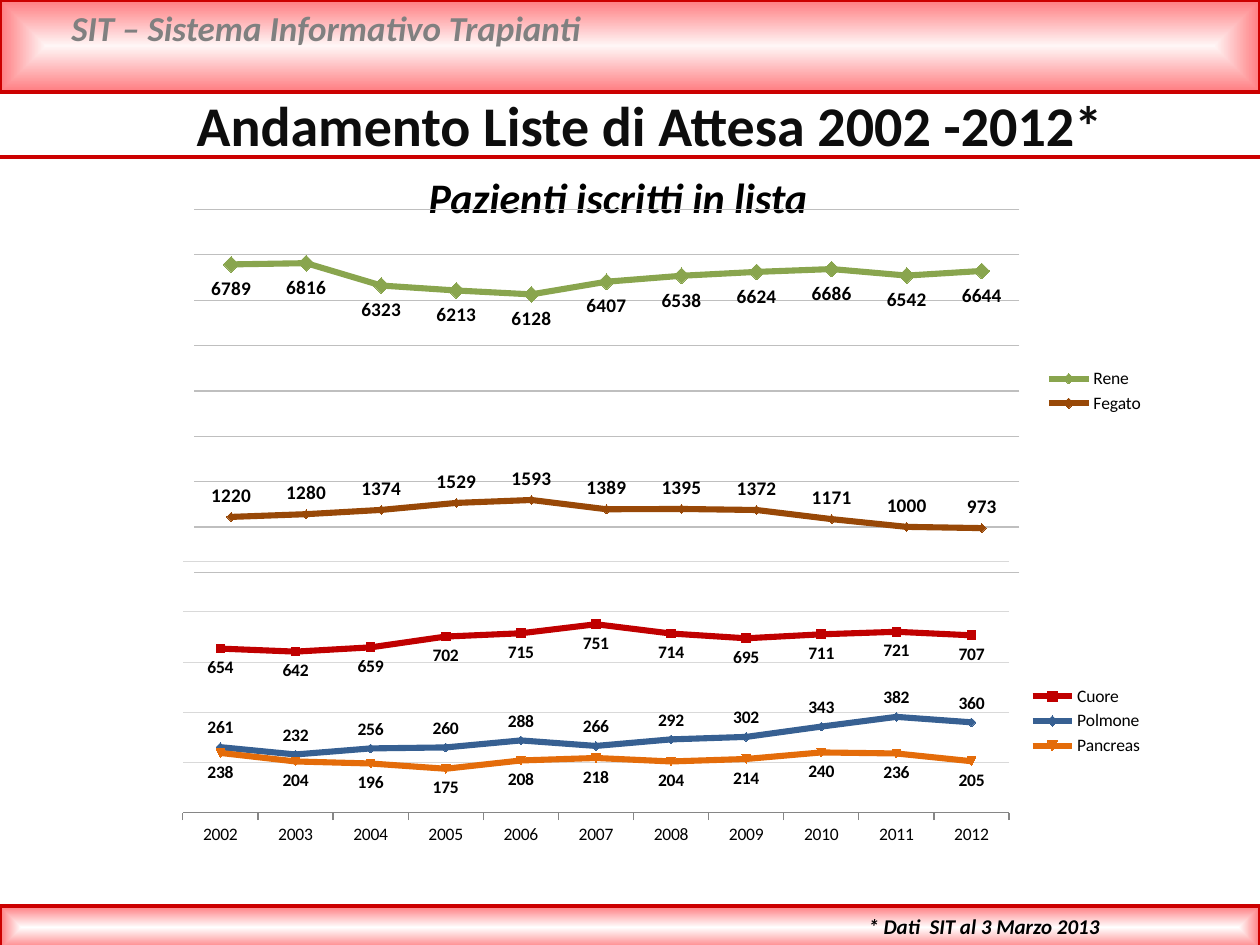
"""Build the transplant waiting list slide with its two line charts."""
import pptx
import pptx.chart.data
import pptx.dml.color
import pptx.enum.chart
import pptx.enum.shapes
import pptx.enum.text
import pptx.oxml
import pptx.oxml.ns
import pptx.util

PX = 914400 / 126
Pt = pptx.util.Pt
Marker = pptx.enum.chart.XL_MARKER_STYLE
Position = pptx.enum.chart.XL_LABEL_POSITION
Align = pptx.enum.text.PP_ALIGN
NS = pptx.oxml.ns.nsdecls("a", "c")


def px(*lengths):
    return [round(length * PX) for length in lengths]


def paint(color_format, color):
    color_format.rgb = pptx.dml.color.RGBColor.from_string(color)


deck = pptx.Presentation()
deck.slide_width, deck.slide_height = px(1260, 945)
slide = deck.slides.add_slide(deck.slide_layouts[6])

for top, height, center in [(0, 92, "FFF6F6"), (906, 43, "FFFFFF")]:
    band = slide.shapes.add_shape(
        pptx.enum.shapes.MSO_SHAPE.RECTANGLE, *px(0, top, 1260, height))
    band.shadow.inherit = False
    band.fill.background()
    paint(band.line.color, "CC0000")
    band.line.width = Pt(2)
    glow = pptx.oxml.parse_xml(
        f'<a:gradFill {NS} rotWithShape="1"><a:gsLst>'
        f'<a:gs pos="0"><a:srgbClr val="{center}"/></a:gs>'
        '<a:gs pos="100000"><a:srgbClr val="FF7C80"/></a:gs></a:gsLst>'
        '<a:path path="shape"><a:fillToRect l="50000" t="50000" r="50000" b="50000"/>'
        '</a:path></a:gradFill>')
    properties = band.element.spPr
    properties.replace(properties.find(pptx.oxml.ns.qn("a:noFill")), glow)

rule = slide.shapes.add_connector(
    pptx.enum.shapes.MSO_CONNECTOR.STRAIGHT, *px(0, 157, 1260, 157))
paint(rule.line.color, "CC0000")
rule.line.width = Pt(2)
rule.element.spPr.append(pptx.oxml.parse_xml(f"<a:effectLst {NS}/>"))

captions = [
    ("SIT – Sistema Informativo Trapianti", (59, 0, 1131, 55), 20, "808080", True, Align.LEFT),
    ("* Dati  SIT al 3 Marzo 2013", (856, 907, 404, 38), 12, "000000", True, Align.LEFT),
    ("Andamento Liste di Attesa 2002 -2012*", (144, 84, 1012, 81), 32, "0D0D0D", False,
     Align.CENTER),
    ("Pazienti iscritti in lista", (352, 165, 532, 58), 24, "000000", True, Align.CENTER),
]
for wording, frame, size, color, italic, align in captions:
    caption = slide.shapes.add_textbox(*px(*frame)).text_frame
    caption.word_wrap = True
    caption.auto_size = pptx.enum.text.MSO_AUTO_SIZE.SHAPE_TO_FIT_TEXT
    paragraph = caption.paragraphs[0]
    paragraph.alignment = align
    run = paragraph.add_run()
    run.text = wording
    run.font.name = "Calibri"
    run.font.size = Pt(size)
    run.font.bold = True
    run.font.italic = italic
    paint(run.font.color, color)

trends = [
    {
        "frame": (174, 202, 983, 378), "plot": (0.02, 0.02, 0.84, 0.96),
        "categories": range(1, 12), "axis": False, "top": 8000, "step": 1000,
        "grid": ("BFBFBF", 0.75), "label_size": 11,
        "organs": [
            ("Rene", (6789, 6816, 6323, 6213, 6128, 6407, 6538, 6624, 6686, 6542, 6644),
             "89A54E", Marker.DIAMOND, 9, Position.BELOW),
            ("Fegato", (1220, 1280, 1374, 1529, 1593, 1389, 1395, 1372, 1171, 1000, 973),
             "984807", Marker.AUTOMATIC, 5, Position.ABOVE),
        ],
    },
    {
        "frame": (164, 532, 992, 378), "plot": (0.019, 0.079, 0.833, 0.664),
        "categories": range(2002, 2013), "axis": True, "top": 1000, "step": 200,
        "grid": ("D9D9D9", 0.5), "label_size": 10,
        "organs": [
            ("Cuore", (654, 642, 659, 702, 715, 751, 714, 695, 711, 721, 707),
             "C00000", Marker.AUTOMATIC, 5, Position.BELOW),
            ("Polmone", (261, 232, 256, 260, 288, 266, 292, 302, 343, 382, 360),
             "376092", Marker.AUTOMATIC, 5, Position.ABOVE),
            ("Pancreas", (238, 204, 196, 175, 208, 218, 204, 214, 240, 236, 205),
             "E46C0A", Marker.AUTOMATIC, 5, Position.BELOW),
        ],
    },
]
for trend in trends:
    patients = pptx.chart.data.CategoryChartData()
    patients.categories = [str(category) for category in trend["categories"]]
    for organ in trend["organs"]:
        patients.add_series(organ[0], organ[1])
    chart = slide.shapes.add_chart(
        pptx.enum.chart.XL_CHART_TYPE.LINE_MARKERS, *px(*trend["frame"]), patients).chart
    chart.has_title = False
    chart.font.name = "Calibri"
    chart.font.size = Pt(10)
    paint(chart.font.color, "000000")
    chart.has_legend = True
    chart.legend.position = pptx.enum.chart.XL_LEGEND_POSITION.RIGHT
    chart.legend.include_in_layout = False

    years = chart.category_axis
    years.visible = trend["axis"]
    years.major_tick_mark = pptx.enum.chart.XL_TICK_MARK.OUTSIDE
    paint(years.format.line.color, "868686")
    years.format.line.width = Pt(0.75)
    counts = chart.value_axis
    counts.visible = False
    counts.minimum_scale, counts.maximum_scale = 0, trend["top"]
    counts.major_unit = trend["step"]
    counts.has_major_gridlines = True
    grid_color, grid_width = trend["grid"]
    paint(counts.major_gridlines.format.line.color, grid_color)
    counts.major_gridlines.format.line.width = Pt(grid_width)

    chart.plots[0].vary_by_categories = False
    for series, organ in zip(chart.plots[0].series, trend["organs"]):
        color, symbol, symbol_size, label_position = organ[2:]
        series.smooth = False
        paint(series.format.line.color, color)
        series.format.line.width = Pt(3.5)
        series.marker.style = symbol
        series.marker.size = symbol_size
        series.marker.format.fill.solid()
        paint(series.marker.format.fill.fore_color, color)
        paint(series.marker.format.line.color, color)
        labels = series.data_labels
        labels.show_value = True
        labels.position = label_position
        labels.font.name = "Calibri"
        labels.font.size = Pt(trend["label_size"])
        labels.font.bold = True
        paint(labels.font.color, "000000")

    plot_area = chart.element.find(".//" + pptx.oxml.ns.qn("c:plotArea"))
    for layout in plot_area.findall(pptx.oxml.ns.qn("c:layout")):
        plot_area.remove(layout)
    left, top, width, height = trend["plot"]
    plot_area.insert(0, pptx.oxml.parse_xml(
        f'<c:layout {NS}><c:manualLayout><c:layoutTarget val="inner"/>'
        '<c:xMode val="edge"/><c:yMode val="edge"/>'
        f'<c:x val="{left}"/><c:y val="{top}"/><c:w val="{width}"/><c:h val="{height}"/>'
        '</c:manualLayout></c:layout>'))

deck.save("out.pptx")
